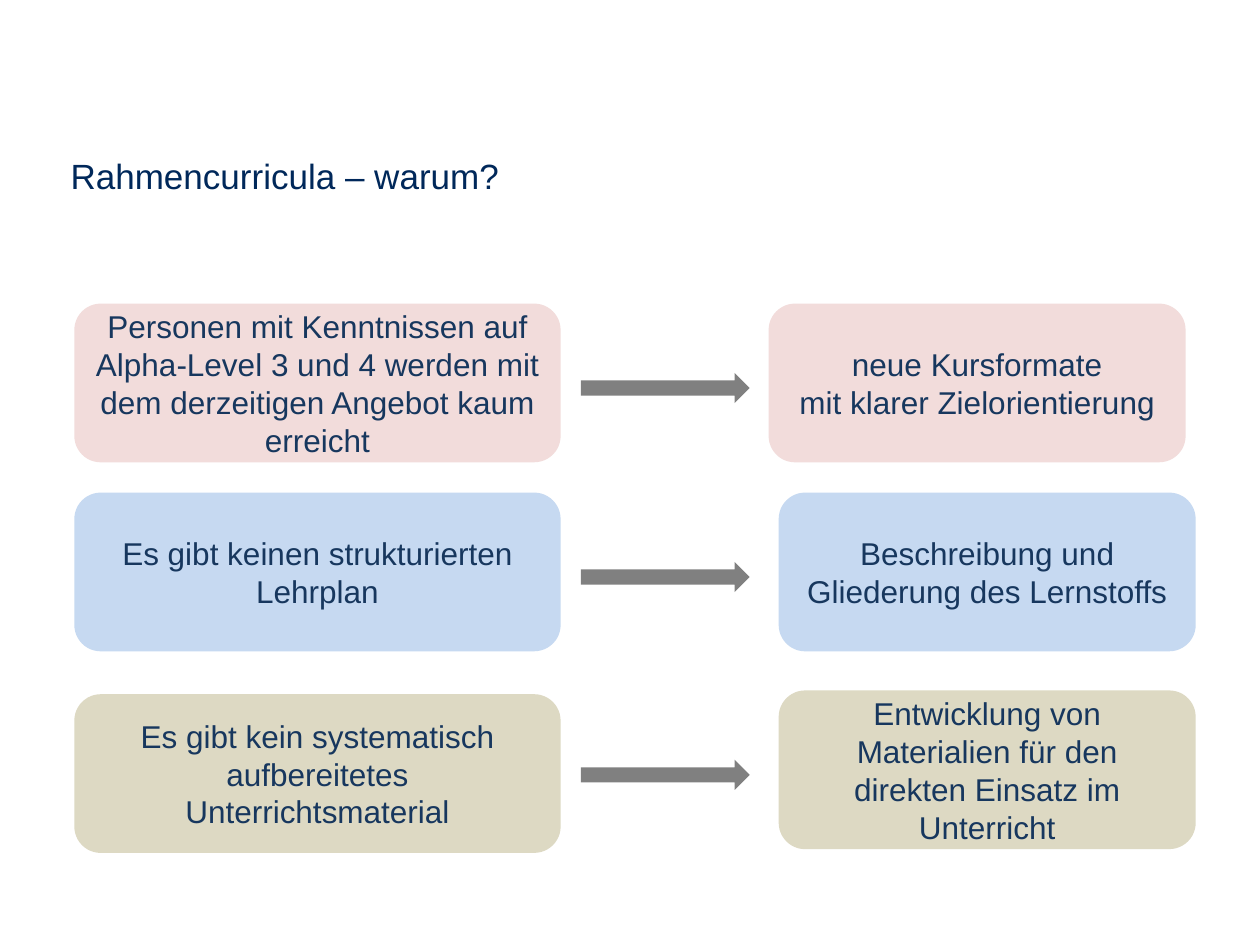
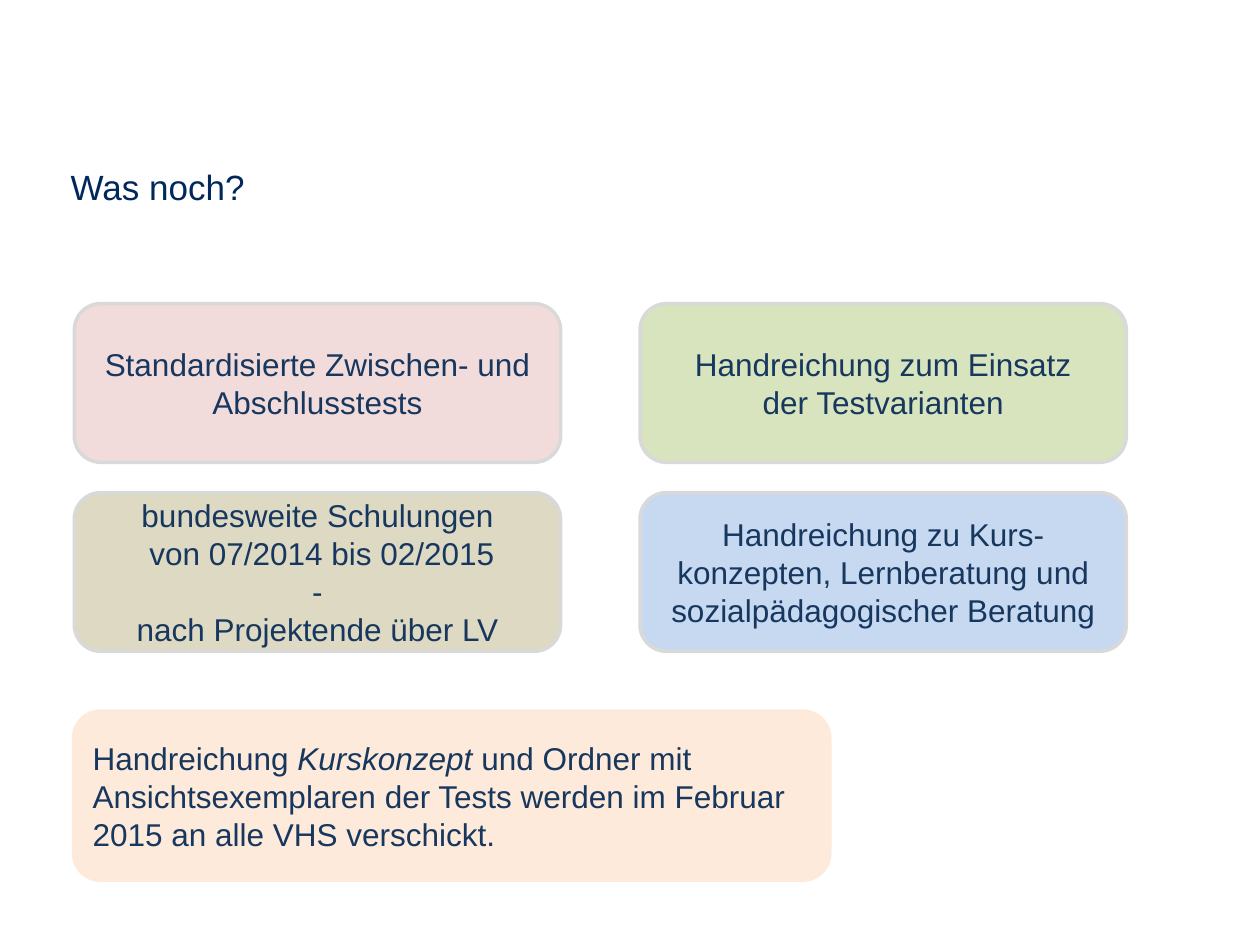
from dataclasses import dataclass
from typing import Optional

from pptx import Presentation
from pptx.dml.color import RGBColor
from pptx.enum.shapes import MSO_SHAPE as Preset
from pptx.enum.text import MSO_ANCHOR as Anchor, PP_ALIGN as Align
from pptx.util import Inches, Pt


@dataclass(frozen=True)
class Theme:
    font: str = "Arial"
    title_size: int = 20
    card_size: int = 18
    outline_width: int = 2
    title: str = "00285A"
    text: str = "17375E"
    rose: str = "F2DCDB"
    blue: str = "C6D9F1"
    sand: str = "DDD9C3"
    green: str = "D7E4BD"
    peach: str = "FDEADA"
    arrow: str = "808080"
    outline: str = "D9D9D9"


@dataclass(frozen=True)
class Card:
    text: str
    fill: str
    left: float
    top: float
    width: float
    height: float = 1.26
    outline: Optional[str] = None
    align: Align = Align.CENTER
    italic: str = ""


@dataclass(frozen=True)
class Reason:
    problem: str
    answer: str
    fill: str
    problem_top: float
    answer_left: float
    answer_top: float
    arrow_top: float


THEME = Theme()
LEFT = 0.59
WIDE = 3.86
ROW_TOPS = (2.41, 3.91)

REASONS = (
    Reason("Personen mit Kenntnissen auf Alpha-Level 3 und 4 werden mit dem derzeitigen Angebot kaum erreicht",
           "neue Kursformate\vmit klarer Zielorientierung",
           THEME.rose, ROW_TOPS[0], 6.1, ROW_TOPS[0], 2.96),
    Reason("Es gibt keinen strukturierten Lehrplan",
           "Beschreibung und Gliederung des Lernstoffs",
           THEME.blue, ROW_TOPS[1], 6.18, ROW_TOPS[1], 4.46),
    Reason("Es gibt kein systematisch aufbereitetes Unterrichtsmaterial",
           "Entwicklung von Materialien für den direkten Einsatz im Unterricht",
           THEME.sand, 5.51, 6.18, 5.48, 6.03),
)

OFFERS = (
    ("Standardisierte Zwischen- und Abschlusstests", THEME.rose),
    ("Handreichung zum Einsatz\vder Testvarianten", THEME.green),
    ("bundesweite Schulungen\n von 07/2014 bis 02/2015\v-\nnach Projektende über LV", THEME.sand),
    ("Handreichung zu Kurs-konzepten, Lernberatung und sozialpädagogischer Beratung", THEME.blue),
)

DISPATCH = Card(
    "Handreichung Kurskonzept und Ordner mit Ansichtsexemplaren der Tests "
    "werden im Februar 2015 an alle VHS verschickt.",
    THEME.peach, 0.57, 5.63, 6.03, 1.37, align=Align.LEFT, italic="Kurskonzept ")


def style_font(font, size: int, color: str) -> None:
    font.name = THEME.font
    font.size = Pt(size)
    font.color.rgb = RGBColor.from_string(color)


def add_titled_slide(deck, title: str, top: float, height: float):
    slide = deck.slides.add_slide(deck.slide_layouts[5])
    heading = slide.shapes.title
    heading.left, heading.top = Inches(0.46), Inches(top)
    heading.width, heading.height = Inches(9.03), Inches(height)
    frame = heading.text_frame
    frame.text = title
    frame.vertical_anchor = Anchor.TOP
    frame.paragraphs[0].alignment = Align.LEFT
    style_font(frame.paragraphs[0].runs[0].font, THEME.title_size, THEME.title)
    return slide


def add_preset(slide, preset: Preset, fill: str, left: float, top: float,
               width: float, height: float):
    shape = slide.shapes.add_shape(preset, Inches(left), Inches(top), Inches(width), Inches(height))
    shape.shadow.inherit = False
    shape.fill.solid()
    shape.fill.fore_color.rgb = RGBColor.from_string(fill)
    shape.line.fill.background()
    return shape


def add_card(slide, card: Card) -> None:
    shape = add_preset(slide, Preset.ROUNDED_RECTANGLE, card.fill,
                       card.left, card.top, card.width, card.height)
    if card.outline:
        shape.line.color.rgb = RGBColor.from_string(card.outline)
        shape.line.width = Pt(THEME.outline_width)
    frame = shape.text_frame
    frame.word_wrap = True
    frame.vertical_anchor = Anchor.MIDDLE
    if card.italic:
        before, after = card.text.split(card.italic)
        for part in (before, card.italic, after):
            run = frame.paragraphs[0].add_run()
            run.text = part
            run.font.italic = part == card.italic
    else:
        frame.text = card.text
    for paragraph in frame.paragraphs:
        paragraph.alignment = card.align
        for run in paragraph.runs:
            style_font(run.font, THEME.card_size, THEME.text)


def build_reasons(deck) -> None:
    slide = add_titled_slide(deck, "Rahmencurricula – warum?", 1.18, 0.77)
    for reason in REASONS:
        add_card(slide, Card(reason.problem, reason.fill, LEFT, reason.problem_top, WIDE))
        add_preset(slide, Preset.RIGHT_ARROW, THEME.arrow, 4.61, reason.arrow_top, 1.34, 0.24)
        add_card(slide, Card(reason.answer, reason.fill, reason.answer_left, reason.answer_top, 3.31))


def build_offers(deck) -> None:
    slide = add_titled_slide(deck, "Was noch?", 1.26, 0.44)
    for index, (offer, fill) in enumerate(OFFERS):
        row, column = divmod(index, 2)
        add_card(slide, Card(offer, fill, LEFT + column * 4.49, ROW_TOPS[row], WIDE,
                             outline=THEME.outline))
    add_card(slide, DISPATCH)


def main() -> None:
    deck = Presentation()
    deck.slide_width, deck.slide_height = Inches(10), Inches(7.5)
    build_reasons(deck)
    build_offers(deck)
    deck.save("out.pptx")


if __name__ == "__main__":
    main()
